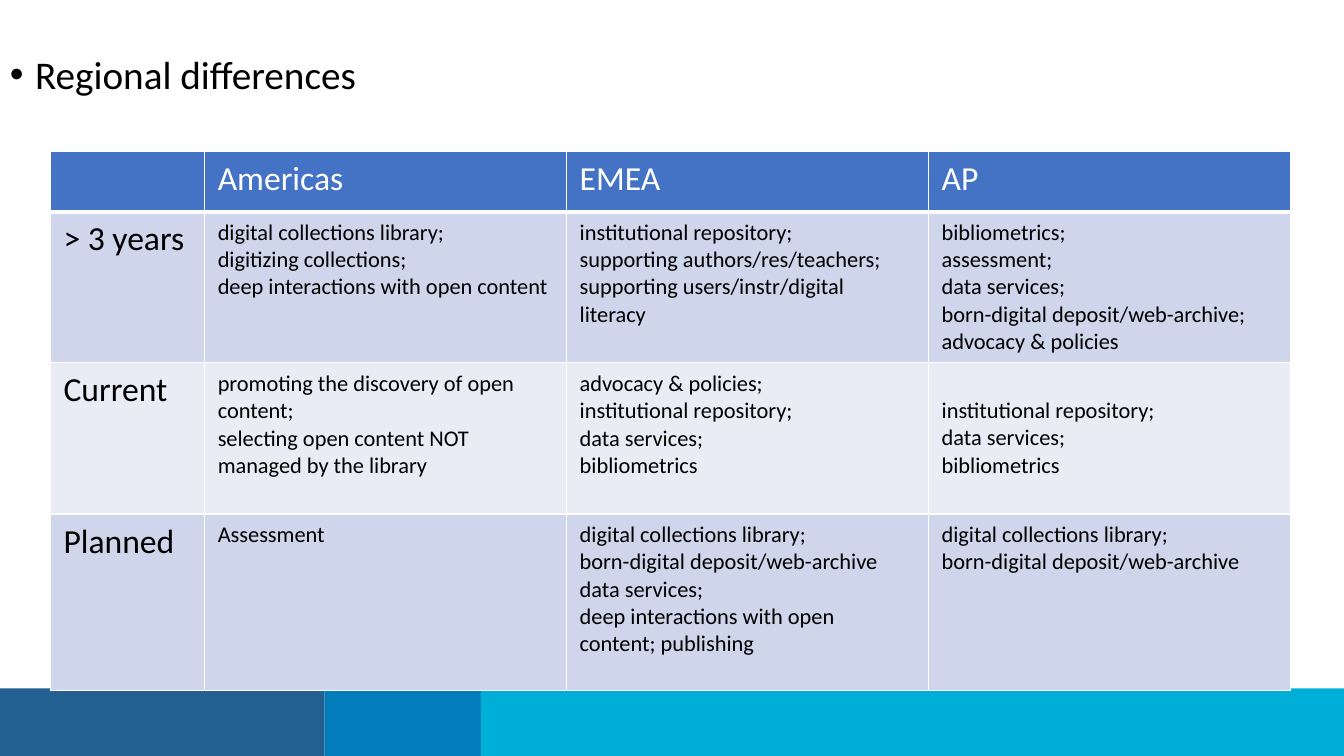
from dataclasses import dataclass

from lxml.etree import SubElement as sub
from pptx import Presentation
from pptx.dml.color import RGBColor
from pptx.enum.shapes import MSO_SHAPE as Kind
from pptx.enum.text import MSO_ANCHOR as Anchor
from pptx.oxml.ns import qn
from pptx.util import Inches, Pt

WHITE = RGBColor(0xFF, 0xFF, 0xFF)
BLACK = RGBColor(0x00, 0x00, 0x00)
HEAD = RGBColor(0x44, 0x72, 0xC4)
DARK = RGBColor(0xCF, 0xD5, 0xEA)
LIGHT = RGBColor(0xE9, 0xEB, 0xF5)
NAVY = RGBColor(0x23, 0x61, 0x92)
BLUE = RGBColor(0x00, 0x7D, 0xBA)
CYAN = RGBColor(0x00, 0xAF, 0xD7)


@dataclass
class Band:
    width: float
    color: RGBColor


@dataclass
class Row:
    height: float
    fill: RGBColor
    label: str
    cells: list[str]


BANDS = [Band(3.22, NAVY), Band(1.55, BLUE), Band(8.56, CYAN)]
WIDTHS = [1.53, 3.59, 3.59, 3.59]
ROWS = [
    Row(0.6, HEAD, "", ["Americas", "EMEA", "AP"]),
    Row(1.5, DARK, "> 3 years", [
        "digital collections library;\ndigitizing collections;\n"
        "deep interactions with open content",
        "institutional repository;\nsupporting authors/res/teachers; "
        "supporting users/instr/digital literacy",
        "bibliometrics;\nassessment;\ndata services;\n"
        "born-digital deposit/web-archive; advocacy & policies",
    ]),
    Row(1.5, LIGHT, "Current", [
        "promoting the discovery of open content;\n"
        "selecting open content NOT managed by the library",
        "advocacy & policies;\ninstitutional repository;\n"
        "data services;\nbibliometrics",
        "institutional repository;\ndata services;\nbibliometrics",
    ]),
    Row(1.75, DARK, "Planned", [
        "Assessment",
        "digital collections library;\nborn-digital deposit/web-archive\n"
        "data services;\ndeep interactions with open content; publishing",
        "digital collections library;\nborn-digital deposit/web-archive",
    ]),
]
LOWERED = (2, 3)


def write(frame, text: str, *, size: float, color: RGBColor = BLACK,
          bullet: bool = False, spacing: float = 1.0) -> None:
    frame.word_wrap = True
    for i, line in enumerate(text.split("\n")):
        para = frame.paragraphs[0] if i == 0 else frame.add_paragraph()
        para.line_spacing = spacing
        if bullet:
            props = para._p.get_or_add_pPr()
            props.set("marL", str(Inches(0.25)))
            props.set("indent", str(-Inches(0.25)))
            sub(props, qn("a:buFont"), typeface="Arial")
            sub(props, qn("a:buChar"), char="•")
        run = para.add_run()
        run.text = line
        font = run.font
        font.name, font.size, font.bold = "Calibri", Pt(size), False
        font.color.rgb = color


def border(cell, base: float) -> None:
    props = cell._tc.get_or_add_tcPr()
    for side, width in zip("LRTB", (1, 1, 1, base)):
        line = sub(props, qn(f"a:ln{side}"), w=str(Pt(width)))
        fill = sub(line, qn("a:solidFill"))
        sub(fill, qn("a:srgbClr"), val=str(WHITE))


def draw_bands(slide) -> None:
    left = 0.0
    for band in BANDS:
        shape = slide.shapes.add_shape(
            Kind.RECTANGLE, Inches(left), Inches(6.83),
            Inches(band.width), Inches(0.67))
        shape.shadow.inherit = False
        shape.fill.solid()
        shape.fill.fore_color.rgb = band.color
        shape.line.fill.background()
        left += band.width


def draw_title(slide) -> None:
    box = slide.shapes.add_textbox(
        Inches(0), Inches(0.5), Inches(12.31), Inches(1))
    write(box.text_frame, "Regional differences", size=28,
          bullet=True, spacing=0.9)


def draw_table(slide) -> None:
    height = sum(row.height for row in ROWS)
    table = slide.shapes.add_table(
        len(ROWS), len(WIDTHS), Inches(0.5), Inches(1.5),
        Inches(sum(WIDTHS)), Inches(height)).table
    for col, width in zip(table.columns, WIDTHS):
        col.width = Inches(width)
    for r, row in enumerate(ROWS):
        table.rows[r].height = Inches(row.height)
        head = r == 0
        for c, text in enumerate([row.label, *row.cells]):
            cell = table.cell(r, c)
            border(cell, 3 if head else 1)
            cell.fill.solid()
            cell.fill.fore_color.rgb = row.fill
            cell.margin_left = cell.margin_right = Inches(0.13)
            cell.margin_top = Inches(0.34 if (r, c) == LOWERED else 0.07)
            cell.margin_bottom = Inches(0.07)
            cell.vertical_anchor = Anchor.TOP
            if text:
                write(cell.text_frame, text,
                      size=24 if head or c == 0 else 16,
                      color=WHITE if head else BLACK)


def main() -> None:
    deck = Presentation()
    deck.slide_width, deck.slide_height = Inches(13.33), Inches(7.5)
    slide = deck.slides.add_slide(deck.slide_layouts[6])
    draw_bands(slide)
    draw_title(slide)
    draw_table(slide)
    deck.save("out.pptx")


if __name__ == "__main__":
    main()
